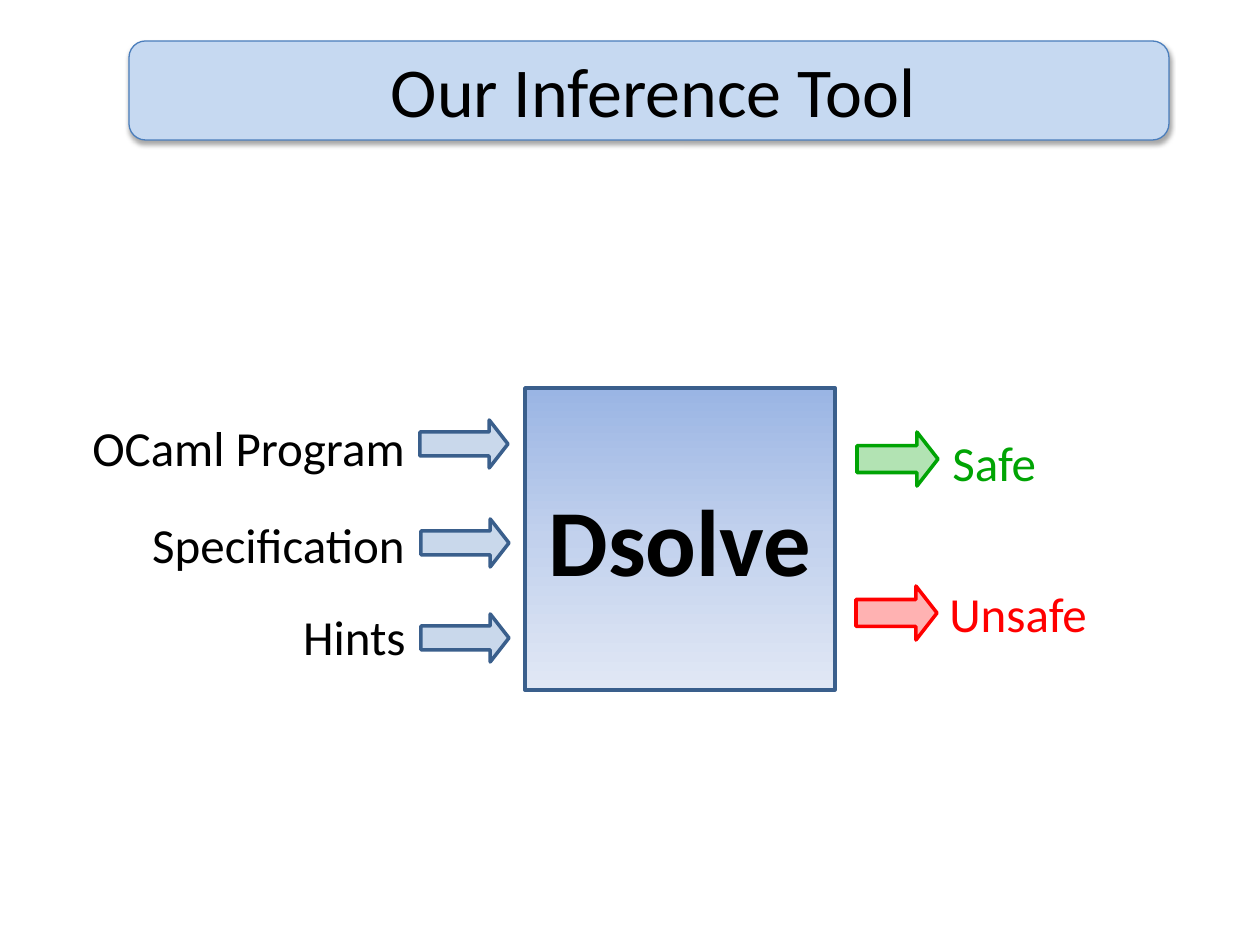
import copy
import lxml.etree
import pptx
import pptx.dml.color
import pptx.enum.shapes
import pptx.enum.text
import pptx.oxml
import pptx.oxml.ns
import pptx.util

PX = 914400 / 126
COLORS = {
    "text": "000000", "bar": "C6D9F1", "bar_line": "4B7EBC",
    "blue": "4F81BD", "blue_line": "3A5F8C", "safe": "00A404", "unsafe": "FF0000",
}
GRADIENT = [(0, "9AB5E4"), (50, "C2D1ED"), (100, "E1E8F5")]
qn = pptx.oxml.ns.qn
SHAPE = pptx.enum.shapes.MSO_SHAPE
ALIGN = pptx.enum.text.PP_ALIGN
RGB = pptx.dml.color.RGBColor.from_string

prs = pptx.Presentation()
prs.slide_width = pptx.util.Inches(10)
prs.slide_height = pptx.util.Inches(7.5)
s = prs.slides.add_slide(prs.slide_layouts[5])


def add_shape(kind, box, line, width):
    sp = s.shapes.add_shape(kind, *[round(v * PX) for v in box])
    sp.shadow.inherit = False
    sp.line.color.rgb = RGB(COLORS[line])
    sp.line.width = pptx.util.Pt(width)
    return sp


def set_text(sp, text, size, color, align, bold=False):
    p = sp.text_frame.paragraphs[0]
    p.text = text
    p.alignment = align
    font = p.runs[0].font
    font.name = "Calibri"
    font.size = pptx.util.Pt(size)
    font.bold = bold
    font.color.rgb = RGB(COLORS[color])


bar = add_shape(SHAPE.ROUNDED_RECTANGLE, (129, 41, 1040, 99), "bar_line", 0.75)
bar.fill.solid()
bar.fill.fore_color.rgb = RGB(COLORS["bar"])
effects = bar._element.spPr.find(qn("a:effectLst"))
shadow = lxml.etree.SubElement(effects, qn("a:outerShdw"), blurRad="39370", dist="22860",
                               dir="5400000", rotWithShape="0")
black = lxml.etree.SubElement(shadow, qn("a:srgbClr"), val="000000")
lxml.etree.SubElement(black, qn("a:alpha"), val="35000")

title = s.shapes.title
title.left, title.top, title.width, title.height = [round(v * PX) for v in (86, 10, 1134, 158)]
title.text_frame.vertical_anchor = pptx.enum.text.MSO_ANCHOR.MIDDLE
set_text(title, "Our Inference Tool", 40, "text", ALIGN.CENTER)
s.shapes._spTree.append(title._element)

labels = [
    ("OCaml Program", 77, 411, 340, "text", ALIGN.RIGHT),
    ("Specification", 136, 508, 281, "text", ALIGN.RIGHT),
    ("Hints", 286, 600, 132, "text", ALIGN.RIGHT),
    ("Safe", 940, 426, 110, "safe", ALIGN.LEFT),
    ("Unsafe", 937, 577, 164, "unsafe", ALIGN.LEFT),
]
for text, x, y, w, color, align in labels:
    sp = s.shapes.add_textbox(*[round(v * PX) for v in (x, y, w, 72)])
    sp.text_frame.word_wrap = False
    sp.text_frame.auto_size = pptx.enum.text.MSO_AUTO_SIZE.SHAPE_TO_FIT_TEXT
    set_text(sp, text, 28, color, align)

arrows = [
    (420, 420, 88, 48, "blue", "blue_line"),
    (421, 519, 88, 48, "blue", "blue_line"),
    (421, 614, 88, 48, "blue", "blue_line"),
    (857, 432, 81, 54, "safe", "safe"),
    (856, 586, 81, 54, "unsafe", "unsafe"),
]
for x, y, w, h, fill, line in arrows:
    sp = add_shape(SHAPE.RIGHT_ARROW, (x, y, w, h), line, 2)
    sp.adjustments[0] = 0.5
    sp.adjustments[1] = 0.39
    sp.fill.solid()
    sp.fill.fore_color.rgb = RGB(COLORS[fill])
    color = sp._element.spPr.find(qn("a:solidFill")).find(qn("a:srgbClr"))
    lxml.etree.SubElement(color, qn("a:alpha"), val="30000")

tool = add_shape(SHAPE.RECTANGLE, (525, 388, 310, 302), "blue_line", 2)
tool.fill.gradient()
tool.fill.gradient_angle = 270
stops = tool._element.spPr.find(qn("a:gradFill")).find(qn("a:gsLst"))
stops.append(copy.deepcopy(stops[0]))
for stop, (position, color) in zip(tool.fill.gradient_stops, GRADIENT):
    stop.position = position / 100
    stop.color.rgb = RGB(color)
tool.text_frame.word_wrap = False
tool.text_frame.vertical_anchor = pptx.enum.text.MSO_ANCHOR.MIDDLE
set_text(tool, "Dsolve", 54, "text", ALIGN.CENTER, bold=True)

prs.save("out.pptx")
